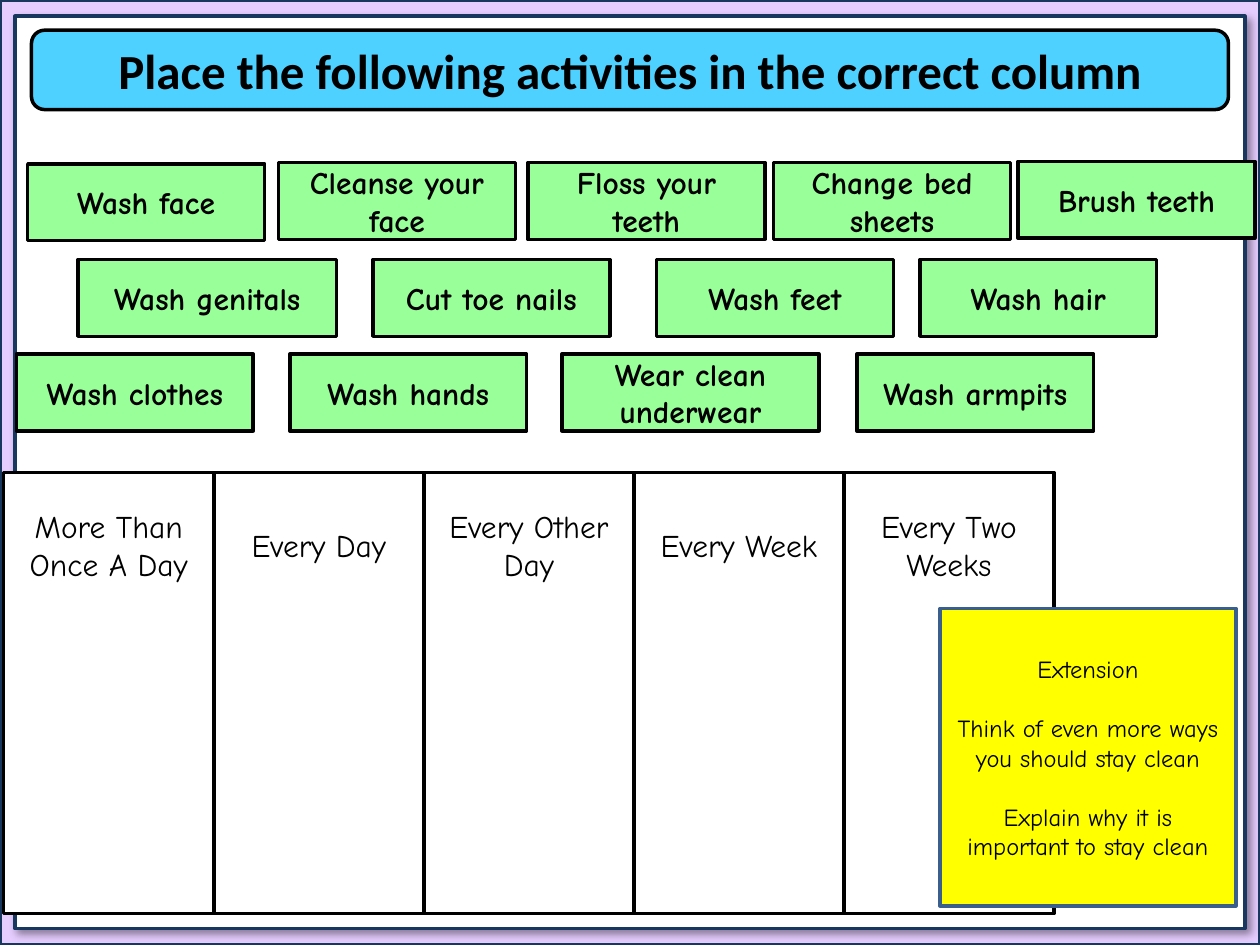
from lxml import etree
from pptx import Presentation, util as u
from pptx.dml.color import RGBColor
from pptx.enum import shapes, text
from pptx.oxml.ns import qn

BLACK = RGBColor(0, 0, 0)
WHITE = RGBColor(0xFF, 0xFF, 0xFF)
LILAC = RGBColor(0xE6, 0xCD, 0xFF)
NAVY = RGBColor(0x17, 0x37, 0x5E)
GREEN = RGBColor(0x99, 0xFF, 0x99)
YELLOW = RGBColor(0xFF, 0xFF, 0)
STEEL = RGBColor(0x3A, 0x5F, 0x8C)
SKY = RGBColor(0x4F, 0xD1, 0xFF)

RECT = shapes.MSO_SHAPE.RECTANGLE
ROUND = shapes.MSO_SHAPE.ROUNDED_RECTANGLE

# Activity cards: text, left, top, width
CARDS = [
    ("Wash face", 0.22, 1.3, 1.88),
    ("Cleanse your face", 2.21, 1.29, 1.88),
    ("Floss your teeth", 4.19, 1.29, 1.88),
    ("Change bed sheets", 6.14, 1.29, 1.88),
    ("Brush teeth", 8.08, 1.28, 1.88),
    ("Wash genitals", 0.62, 2.06, 2.05),
    ("Cut toe nails", 2.96, 2.06, 1.88),
    ("Wash feet", 5.21, 2.06, 1.88),
    ("Wash hair", 7.3, 2.06, 1.88),
    ("Wash clothes", 0.13, 2.81, 1.88),
    ("Wash hands", 2.3, 2.81, 1.88),
    ("Wear clean underwear", 4.46, 2.81, 2.04),
    ("Wash armpits", 6.8, 2.81, 1.88),
]
HEADS = ["More Than Once A Day", "Every Day", "Every Other Day",
         "Every Week", "Every Two Weeks"]
TASK = ["Extension", "Think of even more ways you should stay clean",
        "Explain why it is important to stay clean"]


def add_box(slide, kind, left, top, wide, high, fill, edge=BLACK, weight=2):
    box = slide.shapes.add_shape(kind, u.Inches(left), u.Inches(top),
                                 u.Inches(wide), u.Inches(high))
    box.shadow.inherit = False
    box.fill.solid()
    box.fill.fore_color.rgb = fill
    box.line.color.rgb = edge
    box.line.width = u.Pt(weight)
    return box


def write(box, lines, size, face="Comic Neue", bold=False, gap=0):
    frame = box.text_frame
    frame.word_wrap = True
    frame.vertical_anchor = text.MSO_ANCHOR.MIDDLE
    frame.text = "\n".join(lines)
    for i, para in enumerate(frame.paragraphs):
        para.alignment = text.PP_ALIGN.CENTER
        if i and gap:
            para.space_before = u.Pt(gap)
        for run in para.runs:
            run.font.name = face
            run.font.size = u.Pt(size)
            run.font.bold = bold
            run.font.color.rgb = BLACK


def cast_shadow(box):
    effects = box.element.spPr.find(qn("a:effectLst"))
    shade = etree.SubElement(effects, qn("a:outerShdw"), blurRad=str(u.Pt(4)),
                             dist=str(u.Pt(3)), dir=str(45 * 60000),
                             algn="tl", rotWithShape="0")
    tint = etree.SubElement(shade, qn("a:srgbClr"), val=str(BLACK))
    etree.SubElement(tint, qn("a:alpha"), val="40000")


def add_frame(slide):
    add_box(slide, RECT, 0, 0, 10, 7.5, LILAC, NAVY, 2.25)
    panel = add_box(slide, RECT, 0.12, 0.13, 9.76, 7.24, WHITE, NAVY, 2.25)
    cast_shadow(panel)


def add_columns(slide):
    step = 1.667
    for i, head in enumerate(HEADS):
        col = add_box(slide, RECT, 0.03 + i * step, 3.75, step, 3.5, WHITE)
        write(col, [head], 18)
        # Keep the heading in the upper part of the column
        col.text_frame.margin_bottom = u.Inches(2.4)


def add_cards(slide):
    for label, left, top, wide in CARDS:
        card = add_box(slide, RECT, left, top, wide, 0.61, GREEN)
        write(card, [label], 18, bold=True)


def main():
    prs = Presentation()
    prs.slide_width, prs.slide_height = u.Inches(10), u.Inches(7.5)
    slide = prs.slides.add_slide(prs.slide_layouts[6])

    add_frame(slide)
    add_columns(slide)
    add_cards(slide)

    # Extension task
    note = add_box(slide, RECT, 7.46, 4.83, 2.35, 2.36, YELLOW, STEEL)
    write(note, TASK, 14, gap=17)

    # Title banner
    title = add_box(slide, ROUND, 0.25, 0.24, 9.5, 0.63, SKY)
    write(title, ["Place the following activities in the correct column"],
          28, "Calibri", True)

    prs.save("out.pptx")


if __name__ == "__main__":
    main()
